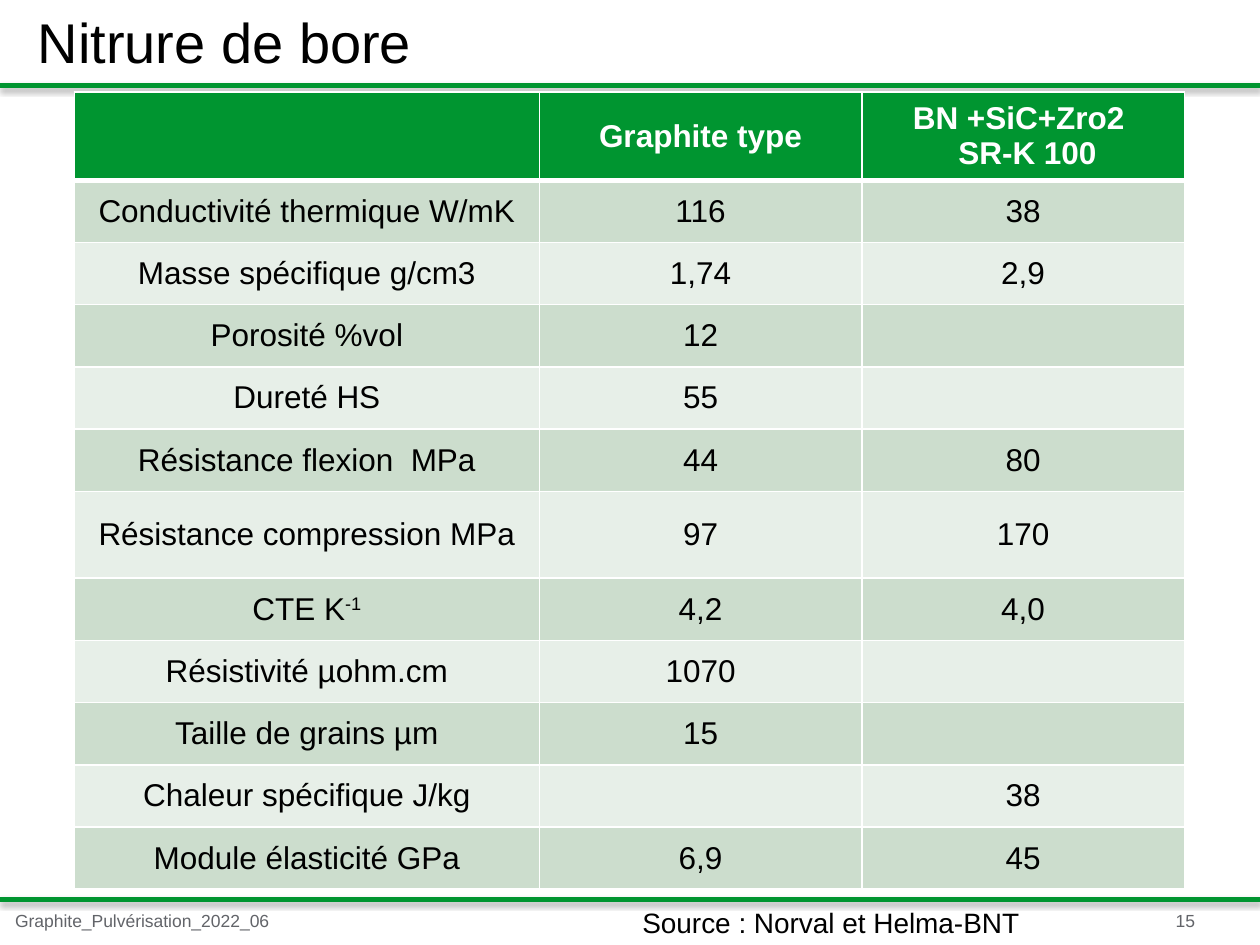
from typing import NamedTuple

from lxml import etree
from pptx import Presentation
from pptx.dml.color import RGBColor
from pptx.enum.shapes import MSO_CONNECTOR
from pptx.enum.text import MSO_ANCHOR, MSO_AUTO_SIZE, PP_ALIGN
from pptx.oxml import parse_xml
from pptx.oxml.ns import nsdecls, qn
from pptx.util import Inches, Pt

STRAIGHT = MSO_CONNECTOR.STRAIGHT
TOP, MIDDLE = MSO_ANCHOR.TOP, MSO_ANCHOR.MIDDLE
LEFT, CENTER = PP_ALIGN.LEFT, PP_ALIGN.CENTER
NO_FIT = MSO_AUTO_SIZE.NONE

GREEN = RGBColor(0x00, 0x95, 0x30)
BAND_DARK = RGBColor(0xCC, 0xDD, 0xCD)
BAND_LIGHT = RGBColor(0xE7, 0xEF, 0xE8)
GREY = RGBColor(0x62, 0x64, 0x69)
BLACK = RGBColor(0x00, 0x00, 0x00)
WHITE = RGBColor(0xFF, 0xFF, 0xFF)

FONT = "Arial"
TABLE_HEIGHT = 6.32
TALL_ROW = 0.69
TALL_ROWS = (0, 6)
COL_WIDTHS = (3.69, 2.56, 2.56)


class Property(NamedTuple):
    label: str
    graphite: str = ""
    nitride: str = ""
    exponent: str = ""


class Caption(NamedTuple):
    text: str
    x: float
    y: float
    w: float
    h: float
    size: int
    color: RGBColor
    inset_x: float = 0
    inset_y: float = 0


HEADER = Property("", "Graphite type", "BN +SiC+Zro2 \n SR-K 100")
PROPERTIES = [
    Property("Conductivité thermique W/mK", "116", "38"),
    Property("Masse spécifique g/cm3", "1,74", "2,9"),
    Property("Porosité %vol", "12"),
    Property("Dureté HS", "55"),
    Property("Résistance flexion  MPa", "44", "80"),
    Property("Résistance compression MPa", "97", "170"),
    Property("CTE K", "4,2", "4,0", exponent="-1"),
    Property("Résistivité µohm.cm", "1070"),
    Property("Taille de grains µm", "15"),
    Property("Chaleur spécifique J/kg", nitride="38"),
    Property("Module élasticité GPa", "6,9", "45"),
]
CAPTIONS = [
    Caption("15", 9.33, 7.22, 0.39, 0.12, 10, GREY),
    Caption("Graphite_Pulvérisation_2022_06", 0.12, 7.22, 3.3, 0.34, 10, GREY),
    Caption("Source : Norval et Helma-BNT", 5, 7.14, 3.9, 0.37, 16, BLACK, 0.1, 0.05),
]


def write(tf, text: str, *, size: int, color: RGBColor, bold: bool = False,
          align=LEFT, exponent: str = "") -> None:
    for i, line in enumerate(text.split("\n")):
        p = tf.paragraphs[0] if i == 0 else tf.add_paragraph()
        p.alignment = align
        p.font.size = Pt(size)
        for part in filter(None, (line, exponent)):
            r = p.add_run()
            r.text = part
            r.font.name = FONT
            r.font.size = Pt(size)
            r.font.bold = bold
            r.font.color.rgb = color
        if exponent:
            r.font._element.set("baseline", "30000")


def add_title(slide, text: str) -> None:
    sp = slide.shapes.title
    sp.left, sp.top = Inches(0.2), Inches(0.01)
    sp.width, sp.height = Inches(7.17), Inches(0.64)
    tf = sp.text_frame
    tf.word_wrap = True
    tf.auto_size = NO_FIT
    tf.vertical_anchor = TOP
    write(tf, text, size=32, color=BLACK)


def add_caption(slide, c: Caption) -> None:
    sp = slide.shapes.add_textbox(Inches(c.x), Inches(c.y), Inches(c.w), Inches(c.h))
    tf = sp.text_frame
    tf.word_wrap = True
    tf.margin_left = tf.margin_right = Inches(c.inset_x)
    tf.margin_top = tf.margin_bottom = Inches(c.inset_y)
    write(tf, c.text, size=c.size, color=c.color)


def add_rule(slide, y: float) -> None:
    line = slide.shapes.add_connector(STRAIGHT, 0, Inches(y), Inches(10), Inches(y))
    line.line.color.rgb = GREEN
    line.line.width = Pt(3)
    line._element.spPr.append(parse_xml(
        f'<a:effectLst {nsdecls("a")}>'
        f'<a:outerShdw blurRad="{Pt(3.1)}" dist="{Pt(1.8)}" dir="5400000" rotWithShape="0">'
        '<a:srgbClr val="000000"><a:alpha val="35000"/></a:srgbClr>'
        '</a:outerShdw></a:effectLst>'))


def set_borders(cell, top: float, bottom: float) -> None:
    tcPr = cell._tc.get_or_add_tcPr()
    for side, width in (("L", 1), ("R", 1), ("T", top), ("B", bottom)):
        ln = etree.SubElement(tcPr, qn(f"a:ln{side}"), w=str(Pt(width)))
        fill = etree.SubElement(ln, qn("a:solidFill"))
        etree.SubElement(fill, qn("a:srgbClr"), val=str(WHITE))


def add_property_table(slide) -> None:
    rows = [HEADER, *PROPERTIES]
    table = slide.shapes.add_table(
        len(rows), len(COL_WIDTHS), Inches(0.59), Inches(0.73),
        Inches(sum(COL_WIDTHS)), Inches(TABLE_HEIGHT)).table
    for col, width in zip(table.columns, COL_WIDTHS):
        col.width = Inches(width)
    short_row = (TABLE_HEIGHT - len(TALL_ROWS) * TALL_ROW) / (len(rows) - len(TALL_ROWS))

    for i, row in enumerate(rows):
        table.rows[i].height = Inches(TALL_ROW if i in TALL_ROWS else short_row)
        header = i == 0
        band = BAND_DARK if i % 2 else BAND_LIGHT
        for j, text in enumerate((row.label, row.graphite, row.nitride)):
            cell = table.cell(i, j)
            set_borders(cell, top=3 if i == 1 else 1, bottom=3 if header else 1)
            cell.fill.solid()
            cell.fill.fore_color.rgb = GREEN if header else band
            cell.vertical_anchor = MIDDLE
            write(cell.text_frame, text, size=18, color=WHITE if header else BLACK,
                  bold=header, align=CENTER, exponent="" if j else row.exponent)


def main() -> None:
    prs = Presentation()
    prs.slide_width, prs.slide_height = Inches(10), Inches(7.5)
    slide = prs.slides.add_slide(prs.slide_layouts[5])
    for y in (0.68, 7.14):
        add_rule(slide, y)
    add_title(slide, "Nitrure de bore")
    for caption in CAPTIONS:
        add_caption(slide, caption)
    add_property_table(slide)
    prs.save("out.pptx")


if __name__ == "__main__":
    main()
